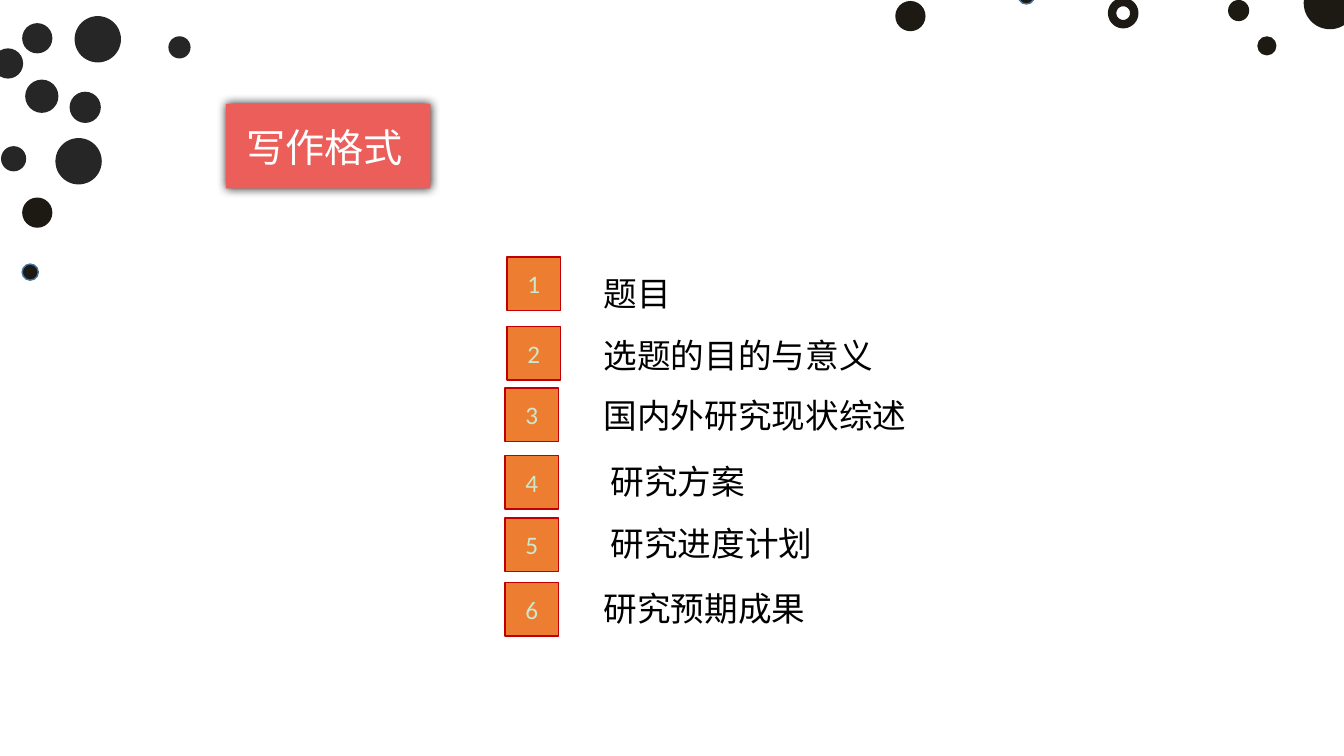
import dataclasses

import lxml.etree
import pptx
import pptx.dml.color
import pptx.enum.shapes
import pptx.enum.text
import pptx.oxml
import pptx.oxml.ns
import pptx.util

PX = 9144
SHAPE = pptx.enum.shapes.MSO_SHAPE
ALIGN = pptx.enum.text.PP_ALIGN
ANCHOR = pptx.enum.text.MSO_ANCHOR


@dataclasses.dataclass(frozen=True)
class Theme:
    background: str = "FFFFFF"
    banner: str = "EB5E59"
    title: str = "FFFFFF"
    tile: str = "ED7D31"
    tile_line: str = "C00000"
    number: str = "CCE8CC"
    label: str = "000000"
    dot: str = "262626"
    dark_dot: str = "1D1913"
    dot_line: str = "43739E"
    title_font: str = "Roboto"
    number_font: str = "Calibri"
    label_font: str = "Noto Sans CJK SC"
    title_size: int = 28
    label_size: int = 24
    number_size: int = 18


THEME = Theme()

GREY_DOTS = [
    (167, 36, 22), (1, 145, 25), (69, 91, 31), (-7, 48, 30), (25, 79, 33),
    (74, 16, 46), (22, 23, 30), (55, 137, 46),
]
DARK_DOTS = [(22, 196, 30), (1218, 0, 21), (1293, -23, 52), (1247, 36, 19), (888, 1, 30)]
OUTLINED_DOTS = [(22, 262, 16), (1010, -12, 16)]
RING = (1103, 2, 22)

SECTIONS = [
    ("题目", 503, 255, 589, 266),
    ("选题的目的与意义", 503, 324, 589, 327),
    ("国内外研究现状综述", 501, 385, 589, 387),
    ("研究方案", 501, 452, 596, 452),
    ("研究进度计划", 501, 514, 596, 514),
    ("研究预期成果", 501, 578, 589, 578),
]


def color(value):
    return pptx.dml.color.RGBColor.from_string(value)


def box(*lengths):
    return [pptx.util.Emu(length * PX) for length in lengths]


def add_shape(slide, kind, bounds, fill=None, line=None, line_width=1):
    shape = slide.shapes.add_shape(kind, *box(*bounds))
    shape.shadow.inherit = False
    if fill:
        shape.fill.solid()
        shape.fill.fore_color.rgb = color(fill)
    else:
        shape.fill.background()
    if line:
        shape.line.color.rgb = color(line)
        shape.line.width = pptx.util.Pt(line_width)
    else:
        shape.line.fill.background()
    return shape


def add_dot(slide, dot, fill=None, line=None, line_width=1):
    left, top, diameter = dot
    add_shape(slide, SHAPE.OVAL, (left, top, diameter, diameter), fill, line, line_width)


def write(shape, text, font, size, text_color, align=ALIGN.LEFT, anchor=ANCHOR.TOP):
    frame = shape.text_frame
    frame.word_wrap = True
    frame.auto_size = pptx.enum.text.MSO_AUTO_SIZE.NONE
    frame.vertical_anchor = anchor
    paragraph = frame.paragraphs[0]
    paragraph.alignment = align
    run = paragraph.add_run()
    run.text = text
    run.font.name = font
    run.font.size = pptx.util.Pt(size)
    run.font.color.rgb = color(text_color)
    east_asian = lxml.etree.SubElement(run.font._element, pptx.oxml.ns.qn("a:ea"))
    east_asian.set("typeface", THEME.label_font)


def add_glow_shadow(shape):
    effects = shape.element.spPr.find(pptx.oxml.ns.qn("a:effectLst"))
    effects.append(pptx.oxml.parse_xml(
        f'<a:outerShdw {pptx.oxml.ns.nsdecls("a")} blurRad="88900" dist="0" dir="2700000">'
        '<a:srgbClr val="000000"><a:alpha val="84000"/></a:srgbClr></a:outerShdw>'
    ))


def add_title(slide, text):
    banner = add_shape(slide, SHAPE.RECTANGULAR_CALLOUT, (224, 103, 203, 84), THEME.banner)
    banner.adjustments[0] = 0.17
    banner.adjustments[1] = 0.5
    add_glow_shadow(banner)
    title = slide.shapes.title
    banner.element.addnext(title.element)
    title.left, title.top, title.width, title.height = box(224, 117, 202, 57)
    title.text_frame.margin_left = pptx.util.Emu(20 * PX)
    write(title, text, THEME.title_font, THEME.title_size, THEME.title)


def add_section(slide, number, section):
    text, tile_left, tile_top, label_left, label_top = section
    tile = add_shape(slide, SHAPE.RECTANGLE, (tile_left, tile_top, 53, 53),
                     THEME.tile, THEME.tile_line)
    write(tile, str(number), THEME.number_font, THEME.number_size, THEME.number,
          ALIGN.CENTER, ANCHOR.MIDDLE)
    label = slide.shapes.add_textbox(*box(label_left, label_top, 364, 50))
    write(label, text, THEME.label_font, THEME.label_size, THEME.label)


def main():
    presentation = pptx.Presentation()
    presentation.slide_width, presentation.slide_height = box(1333, 750)
    slide = presentation.slides.add_slide(presentation.slide_layouts[5])
    slide.background.fill.solid()
    slide.background.fill.fore_color.rgb = color(THEME.background)
    add_title(slide, "写作格式")
    for dot in GREY_DOTS:
        add_dot(slide, dot, THEME.dot)
    for dot in DARK_DOTS:
        add_dot(slide, dot, THEME.dark_dot)
    for dot in OUTLINED_DOTS:
        add_dot(slide, dot, THEME.dark_dot, THEME.dot_line)
    add_dot(slide, RING, line=THEME.dark_dot, line_width=6)
    for number, section in enumerate(SECTIONS, 1):
        add_section(slide, number, section)
    presentation.save("out.pptx")


if __name__ == "__main__":
    main()
